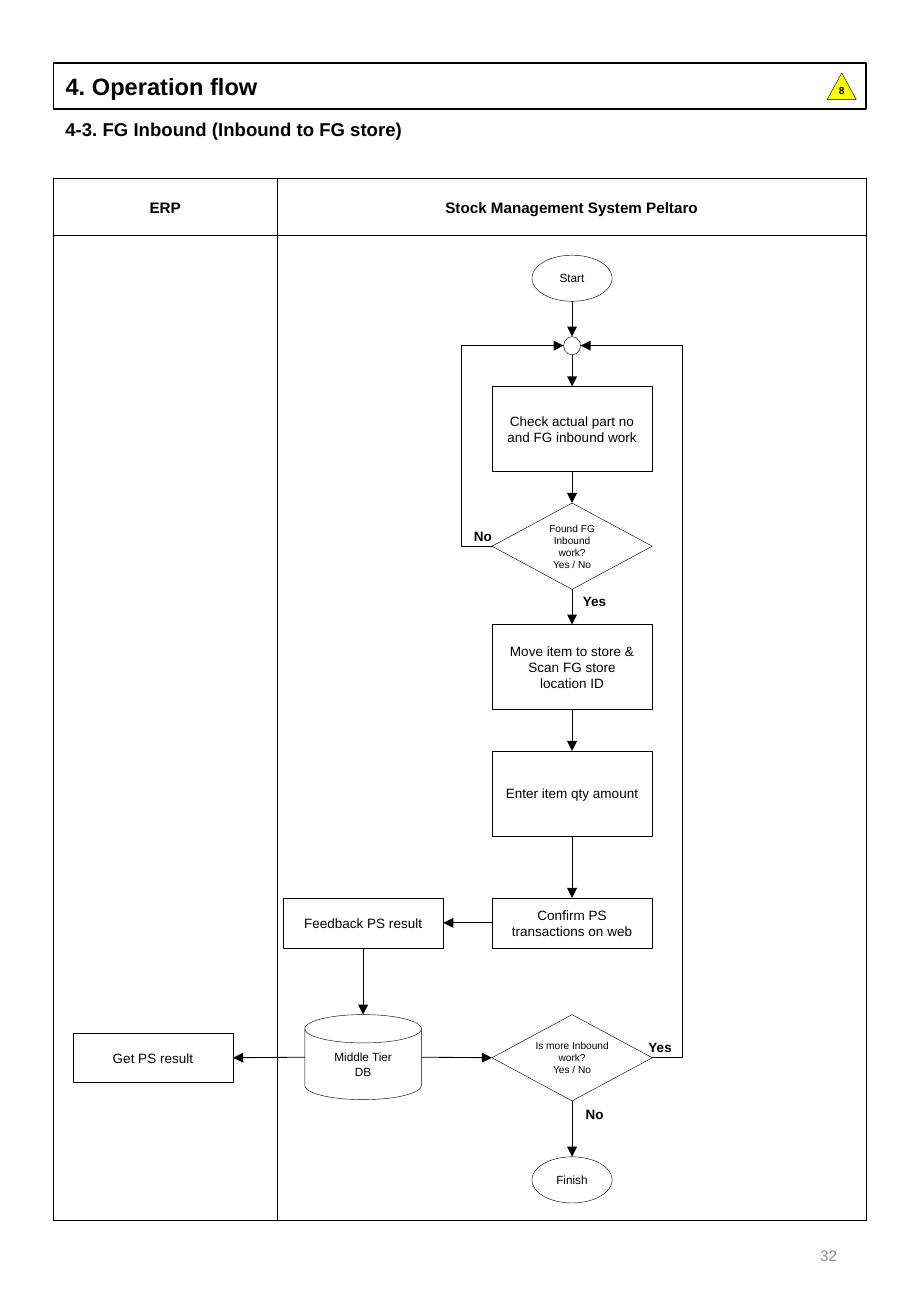
from lxml.etree import SubElement
from pptx import Presentation
from pptx.dml.color import RGBColor
from pptx.enum.shapes import MSO_CONNECTOR, MSO_SHAPE
from pptx.enum.text import MSO_ANCHOR, MSO_AUTO_SIZE, PP_ALIGN
from pptx.oxml.ns import qn
from pptx.util import Inches, Pt

COLORS = {"ink": "000000", "page": "8C8C8C", "badge": "FFFF00"}
FONT = "Arial"
COLS, ROWS = 75, 108.3
TOP, LEFT, BOTTOM, RIGHT = range(4)
GLUED = (MSO_SHAPE.RECTANGLE, MSO_SHAPE.FLOWCHART_DECISION)


def color(name):
    return RGBColor.from_string(COLORS[name])


class FlowSlide:
    def __init__(self, prs):
        self.s = prs.slides.add_slide(prs.slide_layouts[5])
        self.col = prs.slide_width / COLS
        self.row = prs.slide_height / ROWS

    def box(self, x, y, w, h):
        return [round(v) for v in (x * self.col, y * self.row, w * self.col, h * self.row)]

    def set_text(self, sp, text, size, bold=False, align=PP_ALIGN.CENTER, ink="ink",
                 anchor=MSO_ANCHOR.MIDDLE):
        tf = sp.text_frame
        tf.text = text
        tf.word_wrap = True
        tf.auto_size = MSO_AUTO_SIZE.NONE
        tf.vertical_anchor = anchor
        for p in tf.paragraphs:
            p.alignment = align
            p.font.name = FONT
            p.font.size = Pt(size)
            p.font.bold = bold
            p.font.color.rgb = color(ink)

    def outline(self, item, width):
        item.line.color.rgb = color("ink")
        item.line.width = Pt(width)

    def title(self, text, x, y, w, h):
        sp = self.s.shapes.title
        sp.left, sp.top, sp.width, sp.height = self.box(x, y, w, h)
        self.outline(sp, 1)
        self.set_text(sp, text, 14, True, PP_ALIGN.LEFT)

    def label(self, text, x, y, w, h, size, bold=True, **style):
        sp = self.s.shapes.add_textbox(*self.box(x, y, w, h))
        self.set_text(sp, text, size, bold, **style)

    def shape(self, kind, x, y, w, h, text="", size=8, bold=False, fill=None):
        sp = self.s.shapes.add_shape(kind, *self.box(x, y, w, h))
        sp.shadow.inherit = False
        if fill:
            sp.fill.solid()
            sp.fill.fore_color.rgb = color(fill)
        else:
            sp.fill.background()
        self.outline(sp, 0.25)
        if text:
            self.set_text(sp, text, size, bold)
        return sp

    def node(self, kind, cx, top, w, h, text="", size=8):
        return self.shape(kind, cx - w / 2, top, w, h, text, size)

    def step(self, cx, top, h, text):
        return self.node(MSO_SHAPE.RECTANGLE, cx, top, 13.2, h, text)

    def decision(self, cx, top, text):
        return self.node(MSO_SHAPE.FLOWCHART_DECISION, cx, top, 13.2, 7.1, text, 6)

    def terminal(self, cx, top, text):
        return self.node(MSO_SHAPE.OVAL, cx, top, 6.6, 3.8, text, 7)

    def side(self, sp, side):
        dx, dy = ((0.5, 0), (0, 0.5), (0.5, 1), (1, 0.5))[side]
        return round(sp.left + sp.width * dx), round(sp.top + sp.height * dy)

    def line(self, kind, start, end, arrow=True):
        c = self.s.shapes.add_connector(kind, *start, *end)
        self.outline(c, 0.5)
        if arrow:
            SubElement(c._element.spPr.find(qn("a:ln")), qn("a:tailEnd"), type="triangle")
        SubElement(c._element.spPr, qn("a:effectLst"))
        return c

    def divider(self, x, top, bottom):
        start, end = self.box(x, top, 0, 0)[:2], self.box(x, bottom, 0, 0)[:2]
        self.line(MSO_CONNECTOR.STRAIGHT, start, end, False)

    def link(self, a, a_side, b, b_side):
        c = self.line(MSO_CONNECTOR.STRAIGHT, self.side(a, a_side), self.side(b, b_side))
        if a.auto_shape_type in GLUED:
            c.begin_connect(a, a_side)
        if b.auto_shape_type in GLUED:
            c.end_connect(b, b_side)

    def loop(self, a, b, side, reach):
        start, end = self.side(a, side), self.side(b, side)
        c = self.line(MSO_CONNECTOR.ELBOW, start, end)
        share = -reach * self.col / abs(end[0] - start[0])
        guides = c._element.spPr.find(qn("a:prstGeom")).get_or_add_avLst()
        SubElement(guides, qn("a:gd"), name="adj1", fmla=f"val {round(share * 100000)}")


def main():
    prs = Presentation()
    prs.slide_width, prs.slide_height = Inches(7.5), Inches(10.83)
    flow = FlowSlide(prs)
    left, width, lane, lanes_top, header = 4.4, 66.9, 22.8, 14.7, 4.7
    lanes_bottom = 100.4
    erp_x, db_x, main_x = 12.6, 29.9, 47.1

    flow.title("4. Operation flow", left, 5.2, width, 3.8)
    flow.label("4-3. FG Inbound (Inbound to FG store)", left, 9.2, width, 2.9, 11,
               align=PP_ALIGN.LEFT, anchor=MSO_ANCHOR.TOP)
    badge = flow.shape(MSO_SHAPE.ISOSCELES_TRIANGLE, 68.1, 6, 2.4, 2.2, "8", 6, True, "badge")
    badge.text_frame.margin_top = 0
    flow.label("32", 53, lanes_bottom, 16.9, 5.8, 9, False, align=PP_ALIGN.RIGHT, ink="page")

    for height in (lanes_bottom - lanes_top, header):
        flow.shape(MSO_SHAPE.RECTANGLE, left, lanes_top, width, height)
    flow.divider(lane, lanes_top, lanes_bottom)
    flow.label("ERP", left, lanes_top, lane - left, header, 9)
    flow.label("Stock Management System Peltaro", lane, lanes_top, left + width - lane, header, 9)

    start = flow.terminal(main_x, 21, "Start")
    merge = flow.node(MSO_SHAPE.OVAL, main_x, 27.7, 1.4, 1.5)
    check = flow.step(main_x, 31.8, 7, "Check actual part no and FG inbound work")
    found = flow.decision(main_x, 41.4, "Found FG Inbound work?\nYes / No")
    move = flow.step(main_x, 51.4, 7, "Move item to store & Scan FG store location ID")
    enter = flow.step(main_x, 61.8, 7, "Enter item qty amount")
    confirm = flow.step(main_x, 73.9, 4.1, "Confirm PS transactions on web")
    feedback = flow.step(db_x, 73.9, 4.1, "Feedback PS result")
    db = flow.node(MSO_SHAPE.FLOWCHART_MAGNETIC_DISK, db_x, 83.5, 9.6, 7,
                   "Middle Tier\nDB", 7)
    result = flow.step(erp_x, 85, 4.1, "Get PS result")
    more = flow.decision(main_x, 83.5, "Is more Inbound work?\nYes / No")
    more.text_frame.margin_left = more.text_frame.margin_right = 0
    finish = flow.terminal(main_x, 95.2, "Finish")

    chain = (start, merge, check, found, move, enter, confirm)
    for a, b in (*zip(chain, chain[1:]), (feedback, db), (more, finish)):
        flow.link(a, BOTTOM, b, TOP)
    flow.link(confirm, LEFT, feedback, RIGHT)
    flow.link(db, LEFT, result, RIGHT)
    flow.link(db, RIGHT, more, LEFT)
    flow.loop(found, merge, LEFT, 2.5)
    flow.loop(more, merge, RIGHT, 2.5)

    for text, x, y in (("No", 37.2, 43), ("Yes", 46.4, 48.3),
                       ("Yes", 51.8, 85), ("No", 46.4, 90.5)):
        flow.label(text, x, y, 5.1, 2.3, 8)

    prs.save("out.pptx")


if __name__ == "__main__":
    main()
